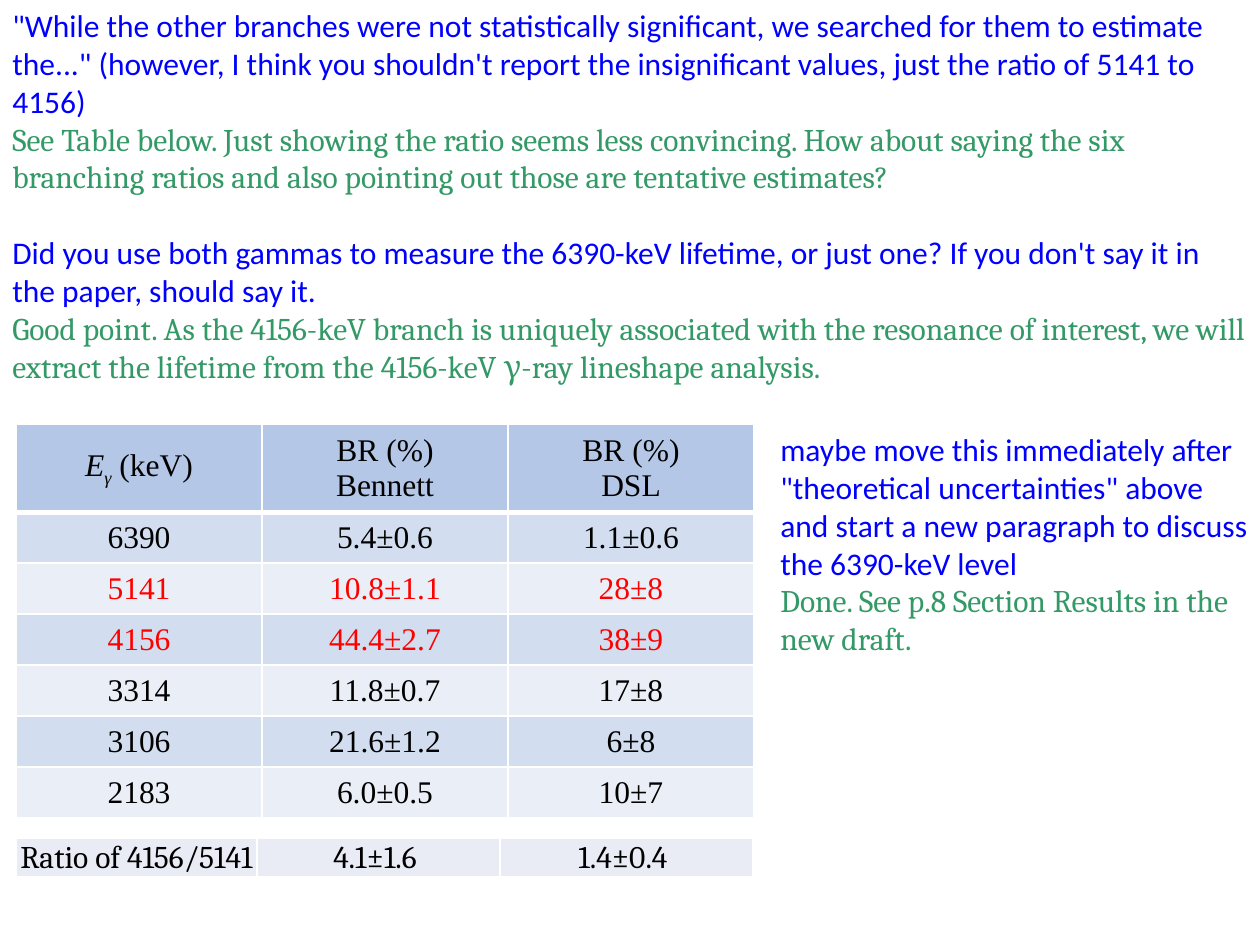
from dataclasses import dataclass

from lxml import etree
from pptx import Presentation
from pptx.dml.color import RGBColor
from pptx.enum.text import MSO_ANCHOR, MSO_AUTO_SIZE, PP_ALIGN
from pptx.oxml.ns import qn
from pptx.util import Emu, Pt

CENTER = PP_ALIGN.CENTER
LEFT = PP_ALIGN.LEFT
MIDDLE = MSO_ANCHOR.MIDDLE
GROW = MSO_AUTO_SIZE.SHAPE_TO_FIT_TEXT

BLUE = RGBColor(0x00, 0x00, 0xFF)
GREEN = RGBColor(0x33, 0x99, 0x66)
RED = RGBColor(0xFF, 0x00, 0x00)
BLACK = RGBColor(0x00, 0x00, 0x00)
WHITE = RGBColor(0xFF, 0xFF, 0xFF)
HEADER_FILL = RGBColor(0xB4, 0xC7, 0xE7)
BAND_FILLS = (RGBColor(0xD2, 0xDE, 0xEF), RGBColor(0xEA, 0xEF, 0xF7))
RATIO_FILL = RGBColor(0xE9, 0xEB, 0xF5)

SANS, SERIF, TABLE_FONT = "Calibri", "Cambria", "Times New Roman"
TIGHT = 1
LINE = 38


def px(length: int) -> Emu:
    """Turn pixels (126 to the inch) into EMU."""
    return Emu(round(length * 914400 / 126))


@dataclass
class Note:
    """A referee remark and the reply to it."""
    remark: str
    reply: str


@dataclass
class Line:
    """One table row: its texts, fill and text colour."""
    texts: tuple
    fill: RGBColor
    color: RGBColor = BLACK


def add_span(para, text: str, *, font=SANS, color=BLACK, italic=False, baseline=0):
    span = para.add_run()
    span.text = text
    span.font.name = font
    span.font.size = Pt(18)
    span.font.color.rgb = color
    if italic:
        span.font.italic = True
    if baseline:
        span._r.get_or_add_rPr().set("baseline", str(baseline))


def next_para(frame, first: bool, align=LEFT):
    para = frame.paragraphs[0] if first else frame.add_paragraph()
    para.alignment = align
    return para


def add_notes(slide, left: int, top: int, width: int, height: int, notes: list[Note]):
    box = slide.shapes.add_textbox(px(left), px(top), px(width), px(height))
    frame = box.text_frame
    frame.word_wrap = True
    frame.auto_size = GROW
    for index, note in enumerate(notes):
        para = next_para(frame, index == 0)
        if index:
            para.space_before = px(LINE)
        add_span(para, note.remark, font=SANS, color=BLUE)
        add_span(next_para(frame, False), note.reply, font=SERIF, color=GREEN)


def set_borders(cell, *, top=1, bottom=1):
    properties = cell._tc.get_or_add_tcPr()
    sides = (("a:lnL", 1), ("a:lnR", 1), ("a:lnT", top), ("a:lnB", bottom))
    for index, (tag, points) in enumerate(sides):
        line = etree.Element(qn(tag), w=str(Pt(points)))
        fill = etree.SubElement(line, qn("a:solidFill"))
        etree.SubElement(fill, qn("a:srgbClr"), val=str(WHITE))
        properties.insert(index, line)


def tighten(cell):
    cell.margin_left = cell.margin_right = cell.margin_top = px(TIGHT)
    cell.margin_bottom = 0


def add_grid(slide, left: int, top: int, widths: list[int], heights: list[int]):
    grid = slide.shapes.add_table(len(heights), len(widths), px(left), px(top),
                                  px(sum(widths)), px(sum(heights))).table
    grid.first_row = grid.horz_banding = False
    for column, width in zip(grid.columns, widths):
        column.width = px(width)
    for row, height in zip(grid.rows, heights):
        row.height = px(height)
    return grid


def fill_row(grid, index: int, line: Line, *, font: str, tight: int, top=1, bottom=1):
    """Write one row; the first `tight` cells get narrow margins."""
    for column, text in enumerate(line.texts):
        cell = grid.cell(index, column)
        cell.vertical_anchor = MIDDLE
        cell.fill.solid()
        cell.fill.fore_color.rgb = line.fill
        set_borders(cell, top=top, bottom=bottom)
        if column < tight:
            tighten(cell)
        for number, part in enumerate(text.split("\n")):
            para = next_para(cell.text_frame, number == 0, CENTER)
            if part:
                add_span(para, part, font=font, color=line.color)


TOP_NOTES = [
    Note("\"While the other branches were not statistically significant, we searched for "
         "them to estimate the...\" (however, I think you shouldn't report the "
         "insignificant values, just the ratio of 5141 to 4156)",
         "See Table below. Just showing the ratio seems less convincing. How about saying "
         "the six branching ratios and also pointing out those are tentative estimates?"),
    Note("Did you use both gammas to measure the 6390-keV lifetime, or just one? If you "
         "don't say it in the paper, should say it.",
         "Good point. As the 4156-keV branch is uniquely associated with the resonance of "
         "interest, we will extract the lifetime from the 4156-keV γ-ray lineshape analysis."),
]
SIDE_NOTES = [
    Note("maybe move this immediately after \"theoretical uncertainties\" above and start "
         "a new paragraph to discuss the 6390-keV level",
         "Done. See p.8 Section Results in the new draft."),
]
BRANCHES = [
    ("6390", "5.4±0.6", "1.1±0.6"),
    ("5141", "10.8±1.1", "28±8"),
    ("4156", "44.4±2.7", "38±9"),
    ("3314", "11.8±0.7", "17±8"),
    ("3106", "21.6±1.2", "6±8"),
    ("2183", "6.0±0.5", "10±7"),
]
RATIO_ROW = ("Ratio of 4156/5141", "4.1±1.6 ", "1.4±0.4 ")
COMPARED = ("5141", "4156")


def main():
    deck = Presentation()
    deck.slide_width, deck.slide_height = px(1260), px(945)
    slide = deck.slides.add_slide(deck.slide_layouts[6])

    # Remarks and replies across the top
    add_notes(slide, 0, 0, 1260, 394, TOP_NOTES)

    # Branching ratios
    grid = add_grid(slide, 16, 424, [246] * 3, [88] + [51] * len(BRANCHES))
    header = Line(("", "BR (%)\nBennett", "BR (%)\nDSL"), HEADER_FILL)
    fill_row(grid, 0, header, font=TABLE_FONT, tight=0, bottom=3)
    energy = grid.cell(0, 0).text_frame.paragraphs[0]
    add_span(energy, "E", font=TABLE_FONT, italic=True)
    add_span(energy, "γ", font=TABLE_FONT, italic=True, baseline=-25000)
    add_span(energy, " (keV)", font=TABLE_FONT)
    for index, texts in enumerate(BRANCHES):
        color = RED if texts[0] in COMPARED else BLACK
        line = Line(texts, BAND_FILLS[index % 2], color)
        fill_row(grid, index + 1, line, font=TABLE_FONT, tight=2, top=1 if index else 3)

    # Ratio of the two compared branches
    ratio = add_grid(slide, 16, 838, [241, 243, 253], [39])
    fill_row(ratio, 0, Line(RATIO_ROW, RATIO_FILL), font=SERIF, tight=3)

    # Remark beside the table
    add_notes(slide, 768, 424, 492, 242, SIDE_NOTES)

    deck.save("out.pptx")


if __name__ == "__main__":
    main()
